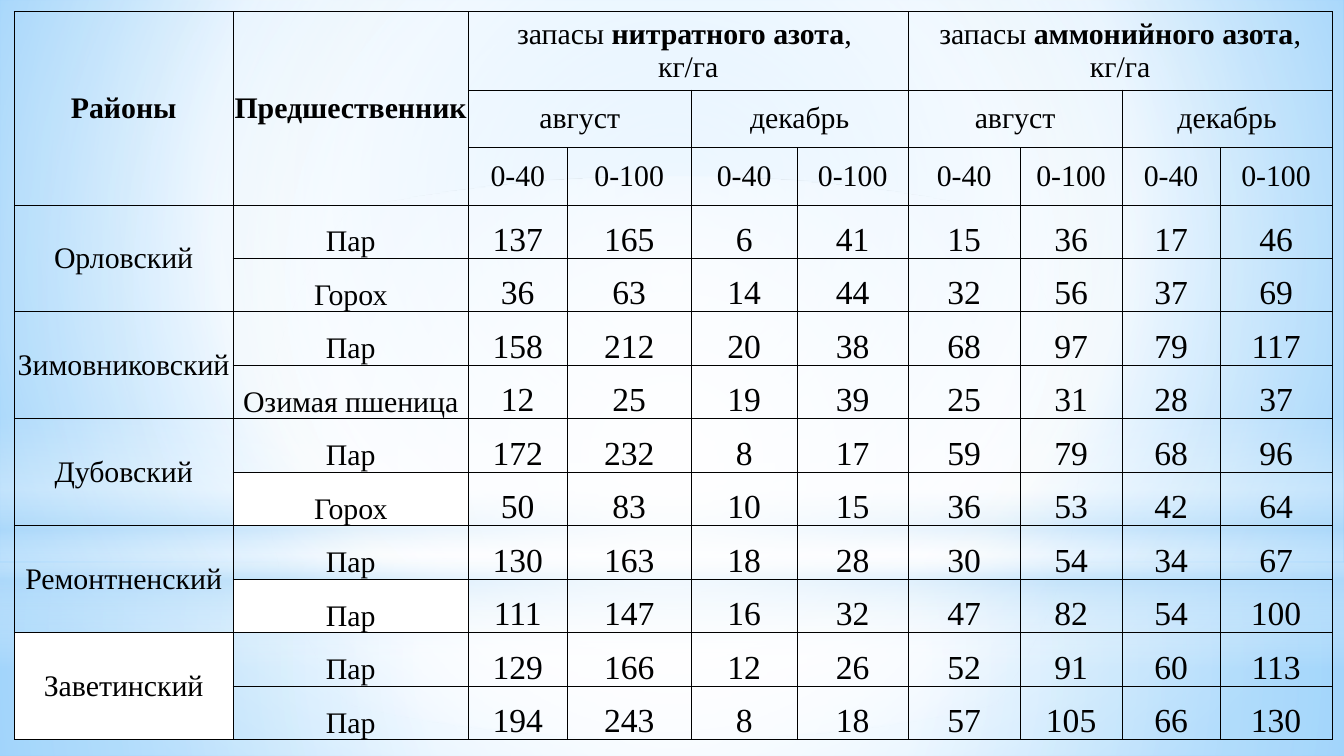
from dataclasses import dataclass

from lxml import etree
from pptx import Presentation
from pptx.dml.color import RGBColor
from pptx.enum.shapes import MSO_SHAPE
from pptx.enum.text import MSO_ANCHOR, PP_ALIGN
from pptx.oxml.ns import qn
from pptx.util import Pt

RECTANGLE, ELLIPSE = MSO_SHAPE.RECTANGLE, MSO_SHAPE.OVAL
MIDDLE, BOTTOM = MSO_ANCHOR.MIDDLE, MSO_ANCHOR.BOTTOM
CENTER = PP_ALIGN.CENTER

BLACK = RGBColor(0x00, 0x00, 0x00)
WHITE = RGBColor(0xFF, 0xFF, 0xFF)
SKY = RGBColor(0x9E, 0xD5, 0xFF)
AZURE = RGBColor(0x5B, 0xB9, 0xFF)
MIST = RGBColor(0xB4, 0xDC, 0xFA)

FONT = "Times New Roman"
LABEL_SIZE, VALUE_SIZE = 16, 18
PAGE_WIDTH, PAGE_HEIGHT = 720, 405
TABLE_LEFT, TABLE_TOP = 7.6, 6.2
COLUMN_WIDTHS = [117.3, 126, 53, 66.4, 56.8, 59.5, 60, 54.6, 52.5, 60]
HEADER_HEIGHTS = [42, 30.9, 30.7]
ROW_HEIGHT = 28.66


@dataclass(frozen=True)
class Stop:
    position: int
    color: RGBColor
    alpha: int = 100


@dataclass(frozen=True)
class Gradient:
    """Circular towards a focus (left, top, right, bottom), or linear if it is None."""
    stops: tuple[Stop, ...]
    focus: tuple[int, int, int, int] | None = (50, 50, 50, 50)


@dataclass(frozen=True)
class Glow:
    shape: MSO_SHAPE
    top: float
    height: float
    gradient: Gradient


@dataclass(frozen=True)
class Span:
    text: str
    bold: bool = False


@dataclass(frozen=True)
class Plot:
    predecessor: str
    values: tuple[int, ...]
    white_label: bool = False


@dataclass(frozen=True)
class District:
    name: str
    plots: tuple[Plot, Plot]
    white_name: bool = False


BACKDROP = Gradient((Stop(0, SKY), Stop(60, WHITE), Stop(100, AZURE)), (20, 10, 20, 60))
GLOWS = [
    Glow(RECTANGLE, 301.5, 103.5, Gradient(
        (Stop(0, WHITE, 91), Stop(37, WHITE, 76), Stop(100, MIST, 79)))),
    Glow(RECTANGLE, 0, 301.5, Gradient(
        (Stop(0, WHITE, 89), Stop(48, WHITE, 62), Stop(100, MIST, 79)))),
    Glow(RECTANGLE, 222.5, 135, Gradient(
        (Stop(0, WHITE, 0), Stop(29, WHITE, 30), Stop(45, MIST, 40),
         Stop(55, WHITE, 26), Stop(65, MIST, 60), Stop(100, WHITE, 0)), None)),
    Glow(ELLIPSE, 94.5, 301.5, Gradient((Stop(0, WHITE), Stop(56, WHITE, 0)))),
]
DISTRICTS = [
    District("Орловский", (
        Plot("Пар", (137, 165, 6, 41, 15, 36, 17, 46)),
        Plot("Горох", (36, 63, 14, 44, 32, 56, 37, 69)))),
    District("Зимовниковский", (
        Plot("Пар", (158, 212, 20, 38, 68, 97, 79, 117)),
        Plot("Озимая пшеница", (12, 25, 19, 39, 25, 31, 28, 37)))),
    District("Дубовский", (
        Plot("Пар", (172, 232, 8, 17, 59, 79, 68, 96)),
        Plot("Горох", (50, 83, 10, 15, 36, 53, 42, 64), True))),
    District("Ремонтненский", (
        Plot("Пар", (130, 163, 18, 28, 30, 54, 34, 67)),
        Plot("Пар", (111, 147, 16, 32, 47, 82, 54, 100), True))),
    District("Заветинский", (
        Plot("Пар", (129, 166, 12, 26, 52, 91, 60, 113)),
        Plot("Пар", (194, 243, 8, 18, 57, 105, 66, 130))), True),
]


def apply_gradient(owner, gradient: Gradient) -> None:
    """Swap the solid fill directly inside the owner element for a gradient."""
    fill = etree.Element(qn("a:gradFill"), rotWithShape="1")
    stop_list = etree.SubElement(fill, qn("a:gsLst"))
    for stop in gradient.stops:
        entry = etree.SubElement(stop_list, qn("a:gs"), pos=str(stop.position * 1000))
        color = etree.SubElement(entry, qn("a:srgbClr"), val=str(stop.color))
        if stop.alpha < 100:
            etree.SubElement(color, qn("a:alpha"), val=str(stop.alpha * 1000))
    if gradient.focus is None:
        etree.SubElement(fill, qn("a:lin"), ang=str(90 * 60000), scaled="0")
    else:
        circle = etree.SubElement(fill, qn("a:path"), path="circle")
        edges = {side: str(share * 1000) for side, share in zip("ltrb", gradient.focus)}
        etree.SubElement(circle, qn("a:fillToRect"), **edges)
    owner.replace(owner.find(qn("a:solidFill")), fill)


def draw_glow(page, glow: Glow) -> None:
    shape = page.shapes.add_shape(
        glow.shape, Pt(0), Pt(glow.top), Pt(PAGE_WIDTH), Pt(glow.height))
    shape.shadow.inherit = False
    shape.line.fill.background()
    shape.fill.solid()
    apply_gradient(shape.element.spPr, glow.gradient)


def prepare_cell(cell) -> None:
    """Clear the fill and margins, and rule all four sides."""
    cell.margin_left = cell.margin_right = cell.margin_top = cell.margin_bottom = Pt(0)
    properties = cell._tc.get_or_add_tcPr()
    for side in ("a:lnL", "a:lnR", "a:lnT", "a:lnB"):
        border = etree.SubElement(properties, qn(side), w=str(Pt(0.5)))
        solid = etree.SubElement(border, qn("a:solidFill"))
        etree.SubElement(solid, qn("a:srgbClr"), val=str(BLACK))
    cell.fill.background()


def write_cell(cell, paragraphs: list[list[Span]], size: int = LABEL_SIZE,
               anchor: MSO_ANCHOR = MIDDLE, white: bool = False) -> None:
    cell.vertical_anchor = anchor
    if white:
        cell.fill.solid()
        cell.fill.fore_color.rgb = WHITE
    frame = cell.text_frame
    for index, spans in enumerate(paragraphs):
        para = frame.add_paragraph() if index else frame.paragraphs[0]
        para.alignment = CENTER
        for span in spans:
            run = para.add_run()
            run.text = span.text
            run.font.name = FONT
            run.font.size = Pt(size)
            run.font.bold = span.bold
            run.font.color.rgb = BLACK


def write_header(table) -> None:
    for column, title in enumerate(("Районы", "Предшественник")):
        table.cell(0, column).merge(table.cell(2, column))
        write_cell(table.cell(0, column), [[Span(title, True)]])
    nitrate = [[Span("запасы "), Span("нитратного азота", True), Span(", ")],
               [Span("кг/га")]]
    ammonium = [[Span("запасы "), Span("аммонийного азота", True), Span(", кг/га")]]
    for column, title in ((2, nitrate), (6, ammonium)):
        table.cell(0, column).merge(table.cell(0, column + 3))
        write_cell(table.cell(0, column), title)
    for column, month in zip(range(2, 10, 2), ("август", "декабрь") * 2):
        table.cell(1, column).merge(table.cell(1, column + 1))
        write_cell(table.cell(1, column), [[Span(month)]])
        for offset, depth in enumerate(("0-40", "0-100")):
            write_cell(table.cell(2, column + offset), [[Span(depth)]])


def write_district(table, top_row: int, district: District) -> None:
    table.cell(top_row, 0).merge(table.cell(top_row + 1, 0))
    write_cell(table.cell(top_row, 0), [[Span(district.name)]], white=district.white_name)
    for row, plot in enumerate(district.plots, top_row):
        write_cell(table.cell(row, 1), [[Span(plot.predecessor)]],
                   anchor=BOTTOM, white=plot.white_label)
        for column, value in enumerate(plot.values, 2):
            write_cell(table.cell(row, column), [[Span(str(value))]], VALUE_SIZE, BOTTOM)


def draw_table(page) -> None:
    heights = HEADER_HEIGHTS + [ROW_HEIGHT] * (2 * len(DISTRICTS))
    table = page.shapes.add_table(
        len(heights), len(COLUMN_WIDTHS), Pt(TABLE_LEFT), Pt(TABLE_TOP),
        Pt(sum(COLUMN_WIDTHS)), Pt(sum(heights))).table
    table.first_row = table.horz_banding = False
    for column, width in zip(table.columns, COLUMN_WIDTHS):
        column.width = Pt(width)
    for row, height in zip(table.rows, heights):
        row.height = Pt(height)
    for cell in table.iter_cells():
        prepare_cell(cell)
    write_header(table)
    for index, district in enumerate(DISTRICTS):
        write_district(table, len(HEADER_HEIGHTS) + 2 * index, district)


def main() -> None:
    deck = Presentation()
    deck.slide_width, deck.slide_height = Pt(PAGE_WIDTH), Pt(PAGE_HEIGHT)
    page = deck.slides.add_slide(deck.slide_layouts[6])
    page.background.fill.solid()
    apply_gradient(page.element.find(".//" + qn("p:bgPr")), BACKDROP)
    for glow in GLOWS:
        draw_glow(page, glow)
    draw_table(page)
    deck.save("out.pptx")


if __name__ == "__main__":
    main()
